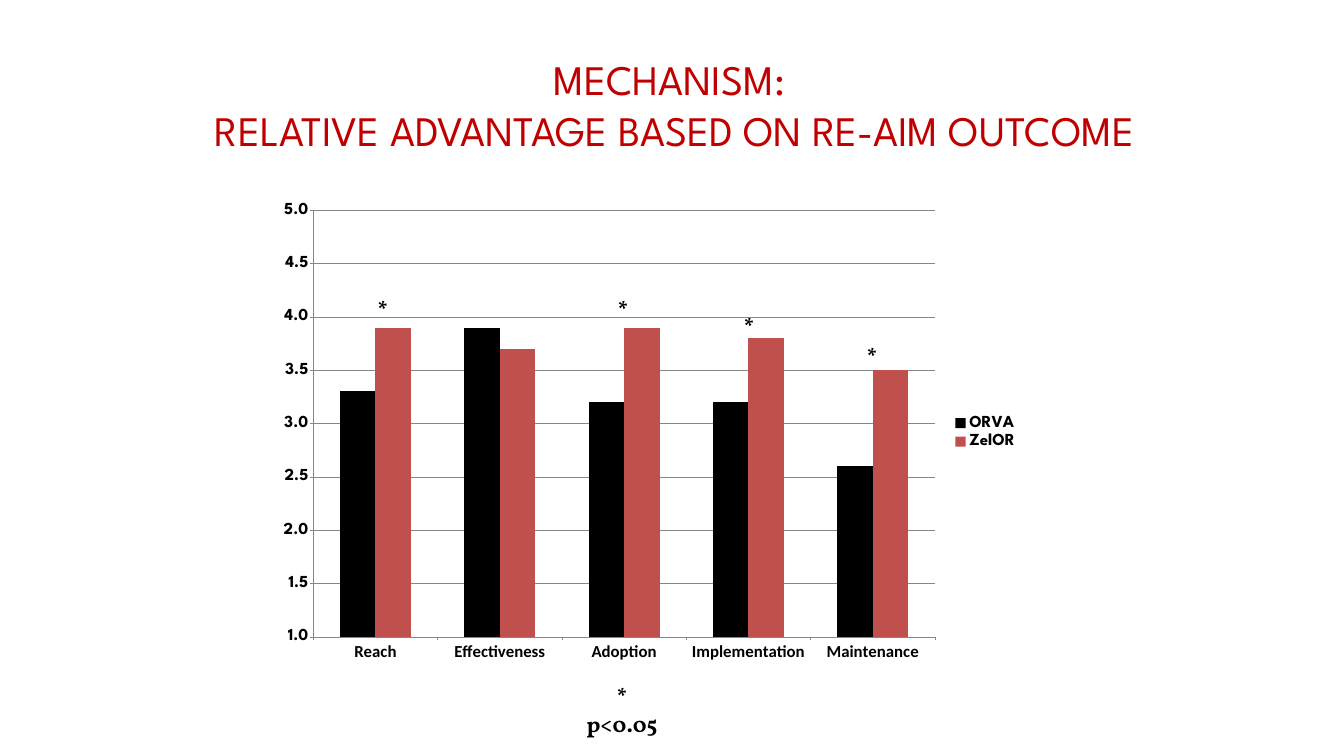
from pptx import Presentation
from pptx.chart.data import CategoryChartData as Data
from pptx.dml.color import RGBColor
from pptx.enum.chart import XL_CHART_TYPE as Kind, XL_LEGEND_POSITION as Side, XL_TICK_MARK as Tick
from pptx.enum.text import MSO_ANCHOR as Anchor, PP_ALIGN as Align
from pptx.util import Inches, Pt

BLACK = RGBColor(0, 0, 0)
RED = RGBColor(0xC0, 0, 0)
ROSE = RGBColor(0xC0, 0x50, 0x4D)
GRAY = RGBColor(0x86, 0x86, 0x86)
SANS, HEAD, SERIF = "Calibri", "League Spartan", "Vollkorn"

TITLE = "MECHANISM: \vRELATIVE ADVANTAGE BASED ON RE-AIM OUTCOME"
CATS = ["Reach", "Effectiveness", "Adoption", "Implementation", "Maintenance"]
SERIES = [
    ("ORVA", [3.3, 3.9, 3.2, 3.2, 2.6], BLACK),
    ("ZelOR", [3.9, 3.7, 3.9, 3.8, 3.5], ROSE),
]
NOTE = ("* p<0.05", 11.42, 13.5, 1.84, True)
STARS = [(7.39, 5.83), (12.16, 5.83), (14.66, 6.17), (17.1, 6.76)]


def style(font, name, size, color, bold=False):
    font.name, font.size, font.bold = name, Pt(size), bold
    font.color.rgb = color


def add_mark(slide, text, left, top, width, wrap):
    box = slide.shapes.add_textbox(Inches(left), Inches(top), Inches(width), Inches(0.64))
    frame = box.text_frame
    frame.word_wrap = wrap
    frame.text = text
    para = frame.paragraphs[0]
    para.alignment = Align.CENTER
    style(para.font, SERIF, 32, BLACK, True)


def add_title(slide):
    title = slide.shapes.title
    title.left, title.top = Inches(2.55), Inches(1.02)
    title.width, title.height = Inches(21.67), Inches(1.83)
    frame = title.text_frame
    frame.text = TITLE
    frame.word_wrap = True
    frame.vertical_anchor = Anchor.TOP
    para = frame.paragraphs[0]
    para.alignment = Align.CENTER
    style(para.font, HEAD, 60, RED)


def add_bars(slide):
    data = Data(number_format="0.0")
    data.categories = CATS
    for name, vals, _ in SERIES:
        data.add_series(name, vals)
    chart = slide.shapes.add_chart(
        Kind.COLUMN_CLUSTERED, Inches(5.33), Inches(3.83), Inches(15), Inches(9.5), data
    ).chart
    style(chart.font, SANS, 10, BLACK)
    chart.has_title = False

    plot = chart.plots[0]
    plot.gap_width, plot.overlap = 150, 0
    plot.vary_by_categories = False
    for bars, (_, _, color) in zip(plot.series, SERIES):
        bars.format.fill.solid()
        bars.format.fill.fore_color.rgb = color

    for axis, face in ((chart.category_axis, SANS), (chart.value_axis, HEAD)):
        style(axis.tick_labels.font, face, 24, BLACK, True)
        axis.major_tick_mark = Tick.OUTSIDE
        axis.minor_tick_mark = Tick.NONE
        axis.format.line.color.rgb = GRAY
    scale = chart.value_axis
    scale.minimum_scale, scale.maximum_scale, scale.major_unit = 1, 5, 0.5
    scale.tick_labels.number_format = "0.0"
    scale.tick_labels.number_format_is_linked = False
    scale.has_major_gridlines = True
    scale.major_gridlines.format.line.color.rgb = GRAY

    chart.has_legend = True
    chart.legend.position = Side.RIGHT
    chart.legend.include_in_layout = False
    style(chart.legend.font, HEAD, 24, BLACK, True)


def main():
    deck = Presentation()
    deck.slide_width, deck.slide_height = Inches(26.67), Inches(15)
    slide = deck.slides.add_slide(deck.slide_layouts[5])
    add_title(slide)
    add_bars(slide)
    add_mark(slide, *NOTE)
    for left, top in STARS:
        add_mark(slide, "*", left, top, 0.4, False)
    deck.save("out.pptx")


if __name__ == "__main__":
    main()
